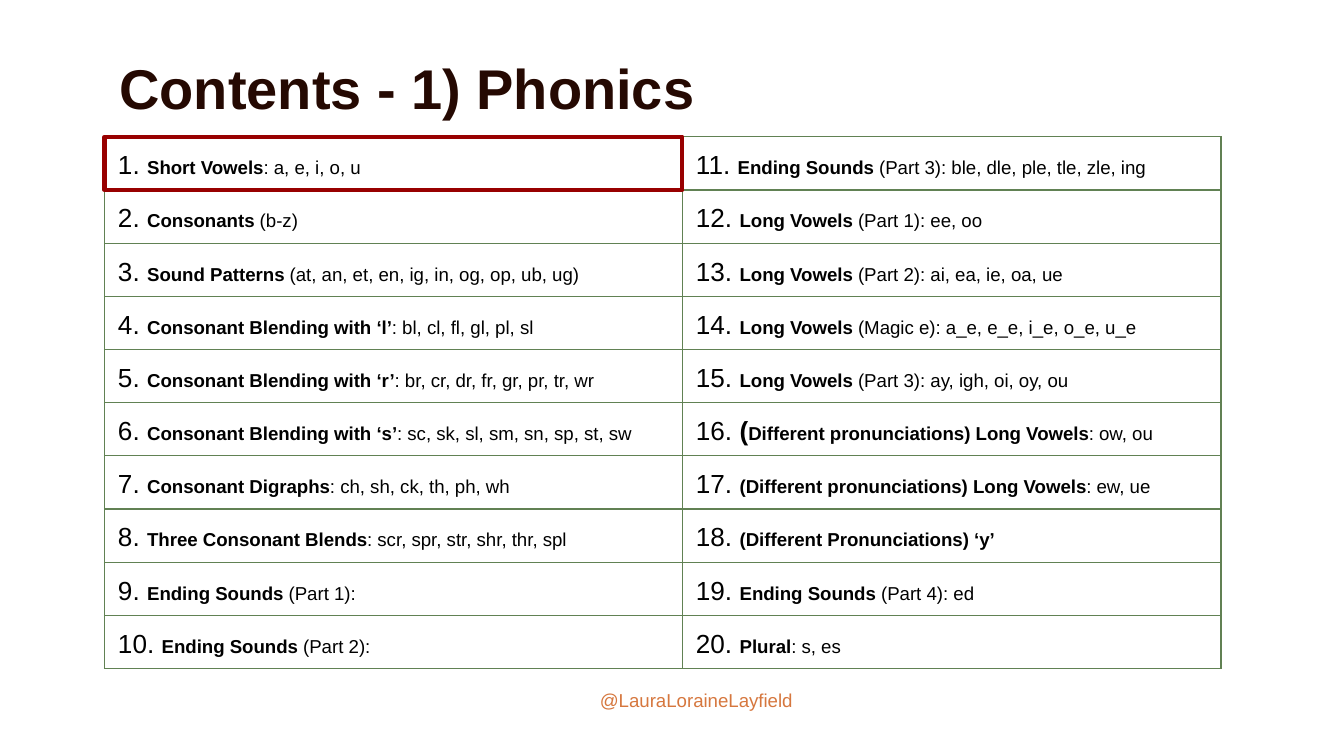
"""Build a phonics contents slide with a two-column lesson table."""

import dataclasses

import lxml.etree
import pptx
import pptx.dml.color
import pptx.enum.shapes
import pptx.enum.text
import pptx.oxml.ns
import pptx.slide
import pptx.table
import pptx.text.text
import pptx.util

Pt = pptx.util.Pt


@dataclasses.dataclass(frozen=True)
class Theme:
    """Colours, font and type sizes of the slide."""

    font: str = "Arial"
    title_color: str = "250902"
    text_color: str = "000000"
    footer_color: str = "D6773E"
    border_color: str = "618153"
    highlight_color: str = "980000"
    title_size: float = 30
    number_size: float = 14
    body_size: float = 10
    border_width: float = 0.75
    highlight_width: float = 2.25
    line_spacing: float = 1.15
    inset: float = 7.2


@dataclasses.dataclass(frozen=True)
class Box:
    """A rectangle in points."""

    left: float
    top: float
    width: float
    height: float

    def lengths(self) -> tuple:
        """Return the four lengths for a python-pptx add method."""
        return tuple(Pt(value) for value in dataclasses.astuple(self))


@dataclasses.dataclass(frozen=True)
class Lesson:
    """A numbered lesson: a bold topic, plain details and a large bold lead."""

    topic: str
    details: str = ""
    lead: str = ""


THEME = Theme()
TITLE_BOX = Box(56.9, 18.7, 607, 45.4)
FOOTER_BOX = Box(141.1, 362.9, 463.7, 26.6)
COLUMN_WIDTHS = (309.6, 288.5)
ROW_HEIGHT = 28.5
ROW_COUNT = 10
TABLE_BOX = Box(56, 73.3, sum(COLUMN_WIDTHS), ROW_HEIGHT * ROW_COUNT)
HIGHLIGHT_BOX = Box(TABLE_BOX.left, TABLE_BOX.top, COLUMN_WIDTHS[0], ROW_HEIGHT)

LESSONS = (
    Lesson("Short Vowels", ": a, e, i, o, u"),
    Lesson("Consonants", " (b-z)"),
    Lesson("Sound Patterns", " (at, an, et, en, ig, in, og, op, ub, ug)"),
    Lesson("Consonant Blending with ‘l’", ": bl, cl, fl, gl, pl, sl"),
    Lesson("Consonant Blending with ‘r’", ": br, cr, dr, fr, gr, pr, tr, wr"),
    Lesson("Consonant Blending with ‘s’", ": sc, sk, sl, sm, sn, sp, st, sw"),
    Lesson("Consonant Digraphs", ": ch, sh, ck, th, ph, wh"),
    Lesson("Three Consonant Blends", ": scr, spr, str, shr, thr, spl"),
    Lesson("Ending Sounds", " (Part 1):"),
    Lesson("Ending Sounds", " (Part 2):"),
    Lesson("Ending Sounds", " (Part 3): ble, dle, ple, tle, zle, ing"),
    Lesson("Long Vowels", " (Part 1): ee, oo"),
    Lesson("Long Vowels", " (Part 2): ai, ea, ie, oa, ue"),
    Lesson("Long Vowels", " (Magic e): a_e, e_e, i_e, o_e, u_e"),
    Lesson("Long Vowels", " (Part 3): ay, igh, oi, oy, ou"),
    Lesson("Different pronunciations) Long Vowels", ": ow, ou", lead="("),
    Lesson("(Different pronunciations) Long Vowels", ": ew, ue"),
    Lesson("(Different Pronunciations) ‘y’"),
    Lesson("Ending Sounds", " (Part 4): ed"),
    Lesson("Plural", ": s, es"),
)


def color(value: str) -> pptx.dml.color.RGBColor:
    """Turn a hexadecimal string into a colour."""
    return pptx.dml.color.RGBColor.from_string(value)


def add_run(paragraph: pptx.text.text._Paragraph, text: str, size: float,
            text_color: str, bold: bool = False) -> None:
    """Append one styled run, unless its text is empty."""
    if not text:
        return
    run = paragraph.add_run()
    run.text = text
    run.font.name = THEME.font
    run.font.size = Pt(size)
    run.font.bold = bold
    run.font.color.rgb = color(text_color)


def add_text(slide: pptx.slide.Slide, box: Box, text: str, size: float, text_color: str,
             alignment: pptx.enum.text.PP_ALIGN, bold: bool = False,
             top_inset: float = THEME.inset) -> None:
    """Add a one-line text box."""
    frame = slide.shapes.add_textbox(*box.lengths()).text_frame
    frame.word_wrap = True
    frame.margin_left = frame.margin_right = frame.margin_bottom = Pt(THEME.inset)
    frame.margin_top = Pt(top_inset)
    paragraph = frame.paragraphs[0]
    paragraph.alignment = alignment
    add_run(paragraph, text, size, text_color, bold)


def style_cell(cell: pptx.table._Cell) -> None:
    """Give a cell thin borders, side margins and no fill."""
    properties = cell._tc.get_or_add_tcPr()
    qualified = pptx.oxml.ns.qn
    for side in ("lnL", "lnR", "lnT", "lnB"):
        line = lxml.etree.SubElement(properties, qualified(f"a:{side}"),
                                     w=str(Pt(THEME.border_width)))
        fill = lxml.etree.SubElement(line, qualified("a:solidFill"))
        lxml.etree.SubElement(fill, qualified("a:srgbClr"), val=THEME.border_color)
    cell.fill.background()
    cell.vertical_anchor = pptx.enum.text.MSO_ANCHOR.MIDDLE
    cell.margin_left = cell.margin_right = Pt(THEME.inset)
    cell.margin_top = cell.margin_bottom = Pt(0)


def fill_cell(cell: pptx.table._Cell, number: int, lesson: Lesson) -> None:
    """Write one numbered lesson into a cell."""
    style_cell(cell)
    paragraph = cell.text_frame.paragraphs[0]
    paragraph.line_spacing = THEME.line_spacing
    add_run(paragraph, f"{number}. ", THEME.number_size, THEME.text_color)
    add_run(paragraph, lesson.lead, THEME.number_size, THEME.text_color, True)
    add_run(paragraph, lesson.topic, THEME.body_size, THEME.text_color, True)
    add_run(paragraph, lesson.details, THEME.body_size, THEME.text_color)


def add_lesson_table(slide: pptx.slide.Slide) -> None:
    """Add the lessons, numbered down each column."""
    table = slide.shapes.add_table(ROW_COUNT, len(COLUMN_WIDTHS), *TABLE_BOX.lengths()).table
    table.first_row = table.horz_banding = False
    for column, width in zip(table.columns, COLUMN_WIDTHS):
        column.width = Pt(width)
    for row in table.rows:
        row.height = Pt(ROW_HEIGHT)
    for index, lesson in enumerate(LESSONS):
        column_index, row_index = divmod(index, ROW_COUNT)
        fill_cell(table.cell(row_index, column_index), index + 1, lesson)


def add_highlight(slide: pptx.slide.Slide) -> None:
    """Outline the first lesson."""
    shape = slide.shapes.add_shape(pptx.enum.shapes.MSO_SHAPE.RECTANGLE,
                                   *HIGHLIGHT_BOX.lengths())
    shape.shadow.inherit = False
    shape.fill.background()
    shape.line.color.rgb = color(THEME.highlight_color)
    shape.line.width = Pt(THEME.highlight_width)


def main() -> None:
    """Build and save the presentation."""
    presentation = pptx.Presentation()
    presentation.slide_width = Pt(720)
    presentation.slide_height = Pt(405)
    slide = presentation.slides.add_slide(presentation.slide_layouts[6])
    alignments = pptx.enum.text.PP_ALIGN
    add_text(slide, TITLE_BOX, "Contents - 1) Phonics", THEME.title_size,
             THEME.title_color, alignments.LEFT, bold=True, top_inset=10)
    add_lesson_table(slide)
    add_highlight(slide)
    add_text(slide, FOOTER_BOX, "@LauraLoraineLayfield", THEME.body_size,
             THEME.footer_color, alignments.CENTER)
    presentation.save("out.pptx")


if __name__ == "__main__":
    main()
